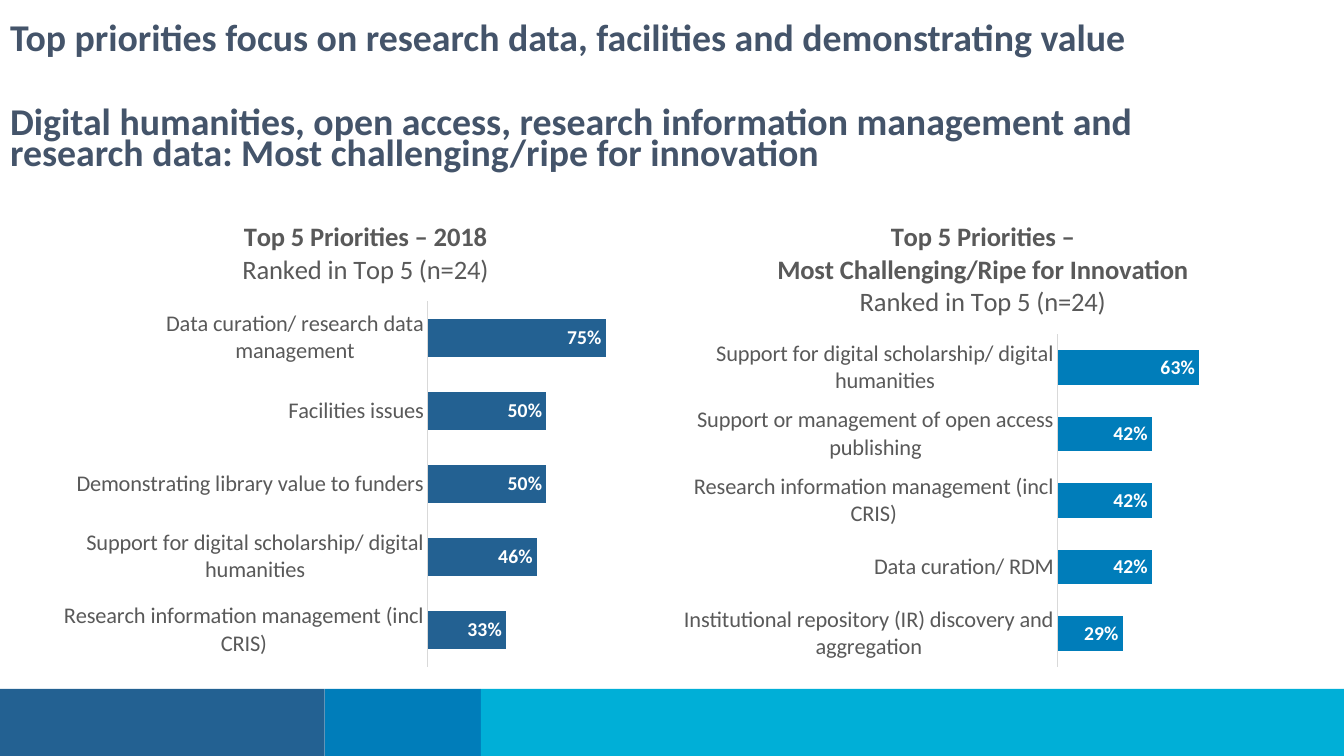
from lxml import etree
from pptx import Presentation
from pptx import util as u
from pptx.chart import data as cd
from pptx.dml import color
from pptx.enum import chart as ch, shapes, text
from pptx.oxml import ns

Pt = u.Pt


def tint(code):
    return color.RGBColor.from_string(code)


class Deck:
    font = "Calibri"
    navy, blue, cyan = "236192", "007DBA", "00AFD7"
    slate, gray, rule, white = "44546A", "595959", "D9D9D9", "FFFFFF"

    def __init__(self):
        self.prs = Presentation()
        self.prs.slide_width, self.prs.slide_height = Pt(960), Pt(540)
        self.slide = self.prs.slides.add_slide(self.prs.slide_layouts[5])

    def style(self, font, size, code, bold=False):
        font.name, font.size, font.bold = self.font, Pt(size), bold
        font.color.rgb = tint(code)

    def band(self, left, width, code):
        box = self.slide.shapes.add_shape(
            shapes.MSO_SHAPE.RECTANGLE, Pt(left), Pt(492), Pt(width), Pt(48))
        box.shadow.inherit = False
        box.fill.solid()
        box.fill.fore_color.rgb = tint(code)
        box.line.fill.background()

    def title(self, lines, gap):
        box = self.slide.shapes.title
        box.left, box.top, box.width, box.height = Pt(0), Pt(15), Pt(886), Pt(121)
        frame = box.text_frame
        frame.text = "\n".join(lines)
        frame.word_wrap = True
        frame.auto_size = text.MSO_AUTO_SIZE.NONE
        frame.vertical_anchor = text.MSO_ANCHOR.TOP
        for index, para in enumerate(frame.paragraphs):
            para.alignment = text.PP_ALIGN.LEFT
            para.line_spacing = 0.7
            para.space_before = Pt(gap if index else 0)
            for run in para.runs:
                self.style(run.font, 27, self.slate, True)

    def place(self, plot, frame):
        area = plot._chartSpace.chart.plotArea
        for old in area.findall(ns.qn("c:layout")):
            area.remove(old)
        layout = etree.Element(ns.qn("c:layout"))
        manual = etree.SubElement(layout, ns.qn("c:manualLayout"))
        tags = ("layoutTarget", "xMode", "yMode", "x", "y", "w", "h")
        for tag, val in zip(tags, ("inner", "edge", "edge", *frame)):
            etree.SubElement(manual, ns.qn("c:" + tag)).set("val", str(val))
        area.insert(0, layout)

    def bars(self, left, heads, rows, code, frame):
        data = cd.CategoryChartData(number_format="0%")
        data.categories = [name for name, _ in rows]
        data.add_series("Series 1", [val for _, val in rows])
        plot = self.slide.shapes.add_chart(
            ch.XL_CHART_TYPE.BAR_CLUSTERED,
            Pt(left), Pt(144), Pt(446), Pt(339), data).chart
        self.style(plot.font, 10, "000000")
        plot.has_legend = False
        plot.has_title = True
        head = plot.chart_title
        head.include_in_layout = False
        head.text_frame.text = "\n".join(heads)
        for para in head.text_frame.paragraphs:
            for run in para.runs:
                self.style(run.font, 19, self.gray, para.text != heads[-1])
        self.place(plot, frame)

        cats = plot.category_axis
        cats.major_tick_mark = ch.XL_TICK_MARK.NONE
        cats.format.line.color.rgb = tint(self.rule)
        cats.format.line.width = Pt(0.75)
        self.style(cats.tick_labels.font, 16, self.gray)
        vals = plot.value_axis
        vals.visible = False
        vals.has_major_gridlines = False
        vals.minimum_scale, vals.maximum_scale, vals.major_unit = 0, 1, 0.2

        group = plot.plots[0]
        group.gap_width = 93
        group.vary_by_categories = False
        fill = group.series[0].format.fill
        fill.solid()
        fill.fore_color.rgb = tint(code)
        group.has_data_labels = True
        labels = group.data_labels
        labels.show_value = True
        labels.position = ch.XL_LABEL_POSITION.INSIDE_END
        labels.number_format, labels.number_format_is_linked = "0%", False
        self.style(labels.font, 14, self.white, True)


def main():
    deck = Deck()
    edges = (0, 232, 343.5, 960)
    for left, right, code in zip(edges, edges[1:], (deck.navy, deck.blue, deck.cyan)):
        deck.band(left, right - left, code)
    deck.title((
        "Top priorities focus on research data, facilities and demonstrating value",
        "Digital humanities, open access, research information management and "
        "research data: Most challenging/ripe for innovation"), 37)
    count = "Ranked in Top 5 (n=24)"
    cris = "Research information management (incl CRIS)"
    human = "Support for digital scholarship/ digital humanities"
    deck.bars(38, ("Top 5 Priorities – 2018", count), (
        (cris, 0.33),
        (human, 0.46),
        ("Demonstrating library value to funders", 0.5),
        ("Facilities issues", 0.5),
        ("Data curation/ research data management", 0.75),
    ), deck.navy, (0.6, 0.21, 0.38, 0.77))
    deck.bars(479, (
        "Top 5 Priorities –", "Most Challenging/Ripe for Innovation", count), (
        ("Institutional repository (IR) discovery and aggregation", 0.29),
        ("Data curation/ RDM", 0.42),
        (cris, 0.42),
        ("Support or management of open access publishing", 0.42),
        (human, 0.63),
    ), deck.blue, (0.62, 0.28, 0.36, 0.7))
    deck.prs.save("out.pptx")


if __name__ == "__main__":
    main()
